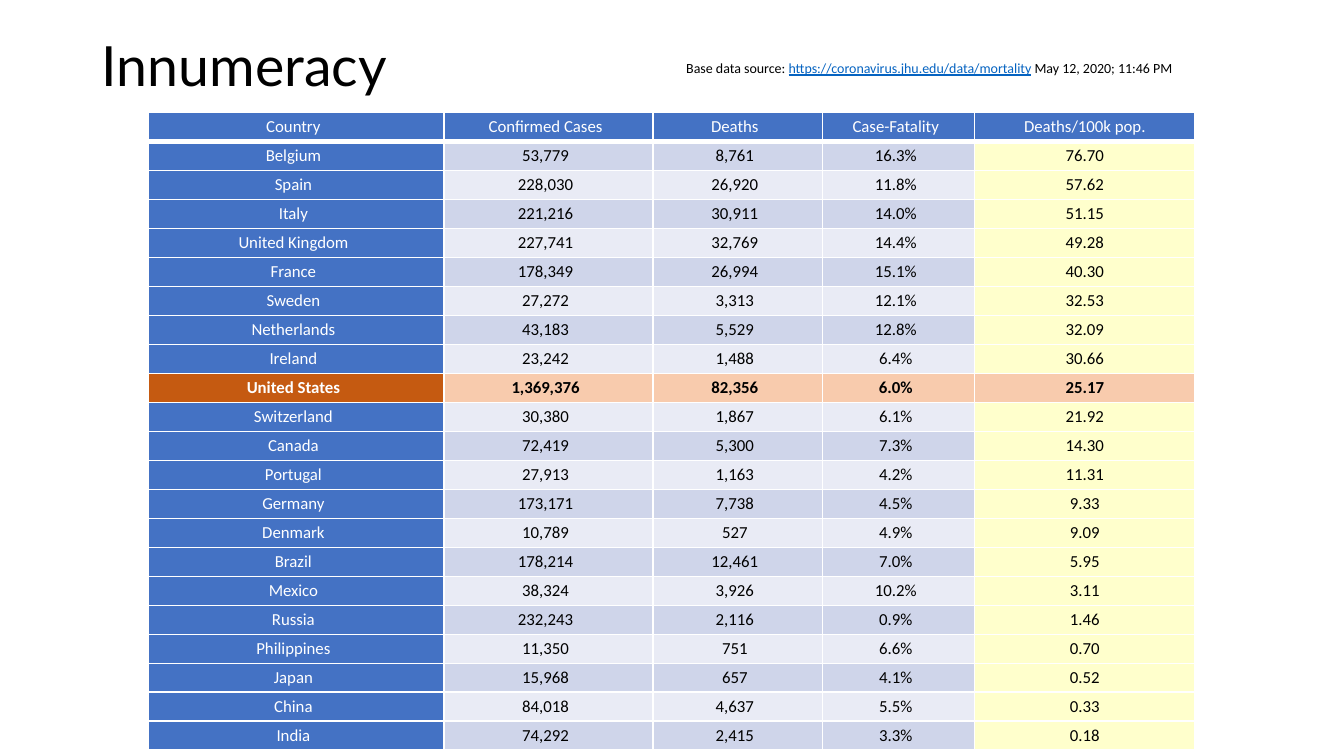
from dataclasses import dataclass

from lxml.etree import SubElement
from pptx import Presentation
from pptx.dml.color import RGBColor
from pptx.enum.text import MSO_ANCHOR as Anchor, PP_ALIGN as Align
from pptx.oxml.ns import qn
from pptx.util import Cm, Pt


@dataclass(frozen=True)
class Theme:
    title_font: str = "Lato"
    body_font: str = "Calibri"
    title_size: float = 33
    source_size: float = 8.3
    table_size: float = 10
    black: str = "000000"
    white: str = "FFFFFF"
    link: str = "0563C1"
    header: str = "4472C4"
    bands: tuple = ("CFD5EA", "E9EBF5")
    rate: str = "FFFFCC"
    highlight_header: str = "C55A11"
    highlight: str = "F8CBAD"


THEME = Theme()
HIGHLIGHTED_COUNTRY = "United States"
COLUMN_WIDTHS = (6.2, 4.39, 3.56, 3.2, 4.62)
HEADINGS = ("Country", "Confirmed Cases", "Deaths", "Case-Fatality", "Deaths/100k pop.")
COUNTRIES = (
    ("Belgium", "53,779", "8,761", "16.3%", "76.70"),
    ("Spain", "228,030", "26,920", "11.8%", "57.62"),
    ("Italy", "221,216", "30,911", "14.0%", "51.15"),
    ("United Kingdom", "227,741", "32,769", "14.4%", "49.28"),
    ("France", "178,349", "26,994", "15.1%", "40.30"),
    ("Sweden", "27,272", "3,313", "12.1%", "32.53"),
    ("Netherlands", "43,183", "5,529", "12.8%", "32.09"),
    ("Ireland", "23,242", "1,488", "6.4%", "30.66"),
    ("United States", "1,369,376", "82,356", "6.0%", "25.17"),
    ("Switzerland", "30,380", "1,867", "6.1%", "21.92"),
    ("Canada", "72,419", "5,300", "7.3%", "14.30"),
    ("Portugal", "27,913", "1,163", "4.2%", "11.31"),
    ("Germany", "173,171", "7,738", "4.5%", "9.33"),
    ("Denmark", "10,789", "527", "4.9%", "9.09"),
    ("Brazil", "178,214", "12,461", "7.0%", "5.95"),
    ("Mexico", "38,324", "3,926", "10.2%", "3.11"),
    ("Russia", "232,243", "2,116", "0.9%", "1.46"),
    ("Philippines", "11,350", "751", "6.6%", "0.70"),
    ("Japan", "15,968", "657", "4.1%", "0.52"),
    ("China", "84,018", "4,637", "5.5%", "0.33"),
    ("India", "74,292", "2,415", "3.3%", "0.18"),
)


def add_text(paragraph, text, *, size, font=THEME.body_font, color=THEME.black,
             bold=False, underline=False):
    run = paragraph.add_run()
    run.text = text
    run.font.name = font
    run.font.size = Pt(size)
    run.font.bold = bold
    run.font.underline = underline
    run.font.color.rgb = RGBColor.from_string(color)


def add_text_frame(slide, box, anchor):
    frame = slide.shapes.add_textbox(*map(Cm, box)).text_frame
    frame.word_wrap = True
    frame.vertical_anchor = anchor
    frame.margin_left = frame.margin_right = Cm(0.21)
    frame.margin_top = frame.margin_bottom = Cm(0.11)
    return frame


def add_title(slide, box):
    paragraph = add_text_frame(slide, box, Anchor.MIDDLE).paragraphs[0]
    paragraph.line_spacing = 0.9
    add_text(paragraph, "Innumeracy", size=THEME.title_size, font=THEME.title_font)


def add_source(slide, box):
    paragraph = add_text_frame(slide, box, Anchor.TOP).paragraphs[0]
    size = THEME.source_size
    add_text(paragraph, "Base data source: ", size=size)
    add_text(paragraph, "https://coronavirus.jhu.edu/data/mortality", size=size,
             color=THEME.link, underline=True)
    add_text(paragraph, " May 12, 2020; 11:46 PM", size=size)


def set_borders(cell, widths):
    """Draw white borders; widths maps a side (L, R, T, B) to points."""
    properties = cell._tc.get_or_add_tcPr()
    for side, width in widths.items():
        line = SubElement(properties, qn(f"a:ln{side}"), w=str(Pt(width)))
        fill = SubElement(line, qn("a:solidFill"))
        SubElement(fill, qn("a:srgbClr"), val=THEME.white)


def cell_fill(row, column, highlighted):
    if row == 0:
        return THEME.header
    if column == 0:
        return THEME.highlight_header if highlighted else THEME.header
    if highlighted:
        return THEME.highlight
    if column == len(HEADINGS) - 1:
        return THEME.rate
    return THEME.bands[(row - 1) % 2]


def format_cell(cell, text, row, column, highlighted):
    is_header = row == 0 or column == 0
    last_column = column == len(HEADINGS) - 1
    cell.vertical_anchor = Anchor.MIDDLE
    cell.margin_left = 0
    cell.margin_right = 0 if last_column else Cm(0.12)
    cell.margin_top = cell.margin_bottom = Cm(0.09)
    set_borders(cell, {"L": 1, "R": 1, "T": 3 if row == 1 else 1, "B": 3 if row == 0 else 1})
    cell.fill.solid()
    cell.fill.fore_color.rgb = RGBColor.from_string(cell_fill(row, column, highlighted))
    paragraph = cell.text_frame.paragraphs[0]
    paragraph.alignment = Align.CENTER
    add_text(paragraph, text, size=THEME.table_size, bold=highlighted,
             color=THEME.white if is_header else THEME.black)


def add_mortality_table(slide, box):
    records = (HEADINGS,) + COUNTRIES
    left, top, width, height = box
    table = slide.shapes.add_table(len(records), len(HEADINGS), Cm(left), Cm(top),
                                   Cm(width), Cm(height)).table
    for column, share in zip(table.columns, COLUMN_WIDTHS):
        column.width = Cm(width * share / sum(COLUMN_WIDTHS))
    for row, record in enumerate(records):
        table.rows[row].height = Cm(height / len(records))
        for column, text in enumerate(record):
            format_cell(table.cell(row, column), text, row, column,
                        record[0] == HIGHLIGHTED_COUNTRY)


def main():
    presentation = Presentation()
    presentation.slide_width = Cm(28.22)
    presentation.slide_height = Cm(15.88)
    slide = presentation.slides.add_slide(presentation.slide_layouts[6])
    add_title(slide, (1.93, 0.84, 24.33, 1.22))
    add_mortality_table(slide, (3.12, 2.36, 21.97, 13.4))
    add_source(slide, (14.2, 1.14, 10.9, 0.61))
    presentation.save("out.pptx")


if __name__ == "__main__":
    main()
